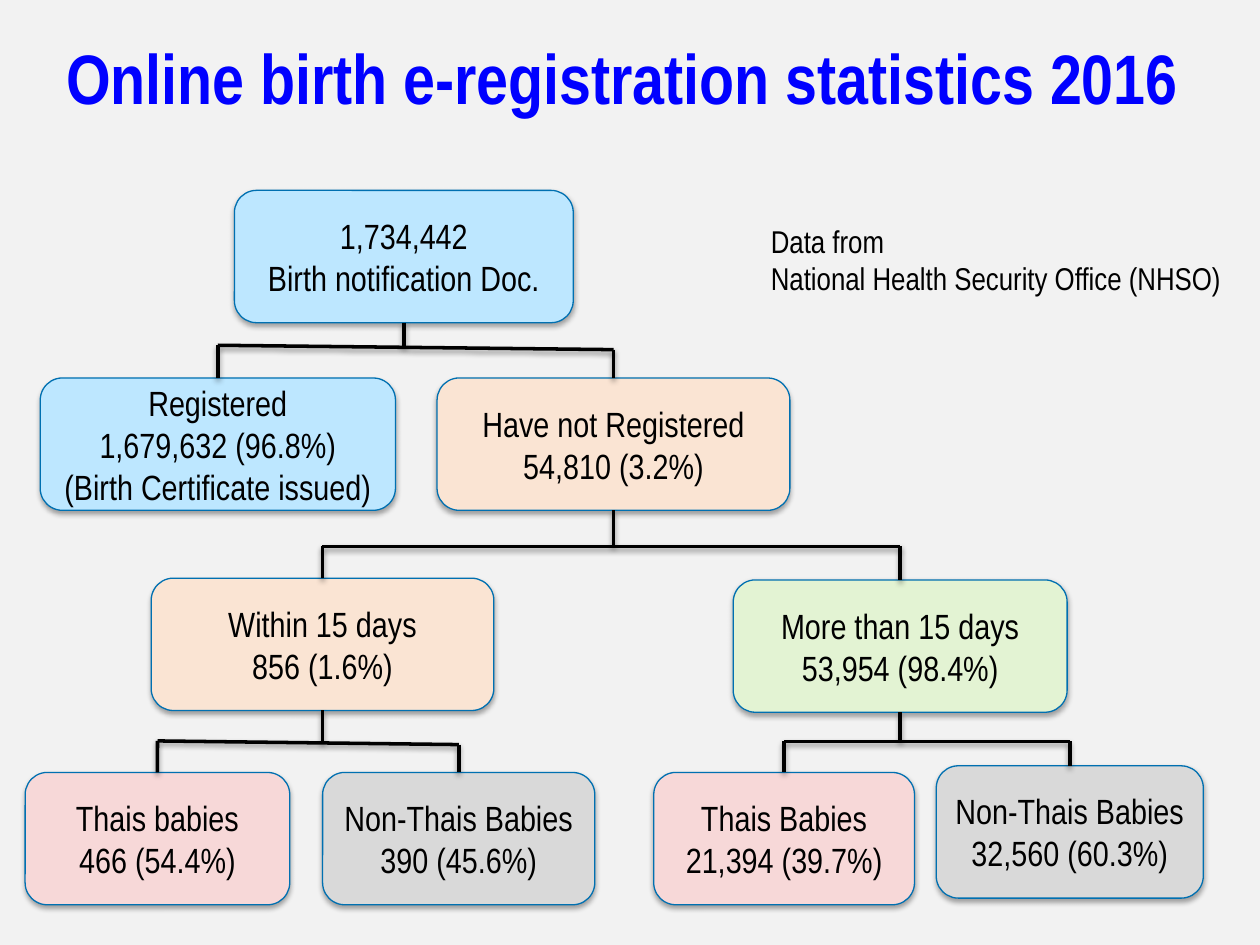
"""Build the birth e-registration statistics tree slide."""
from dataclasses import dataclass
from typing import Any, NamedTuple

import lxml.etree
import pptx
import pptx.dml.color
import pptx.enum.shapes
import pptx.enum.text
import pptx.oxml.ns
import pptx.util

Pt = pptx.util.Pt
RGB = pptx.dml.color.RGBColor.from_string
ALIGN = pptx.enum.text.PP_ALIGN
ANCHOR = pptx.enum.text.MSO_ANCHOR
AUTOFIT = pptx.enum.text.MSO_AUTO_SIZE


@dataclass(frozen=True)
class Theme:
    font: str = "Arial Narrow"
    background: str = "F2F2F2"
    title: str = "0000FF"
    ink: str = "000000"
    outline: str = "0070B1"
    blue: str = "BDE7FF"
    peach: str = "FAE4D3"
    green: str = "E3F3D3"
    pink: str = "F7D8D8"
    gray: str = "D9D9D9"
    title_size: float = 40
    box_size: float = 20
    source_size: float = 18
    outline_width: float = 0.75
    branch_width: float = 2


class Group(NamedTuple):
    text: str
    left: float
    top: float
    width: float
    fill: str


class Branch(NamedTuple):
    parent: str
    children: tuple[str, str]
    bar_left: float
    bar_right: float


THEME = Theme()
BOX_HEIGHT = 75.6

GROUPS = {
    "births": Group("1,734,442\nBirth notification Doc.", 134, 108.8, 193.6, THEME.blue),
    "registered": Group("Registered\n1,679,632 (96.8%)\n(Birth Certificate issued)",
                        23, 216, 203, THEME.blue),
    "unregistered": Group("Have not Registered\n54,810 (3.2%)", 249.8, 216, 201.6, THEME.peach),
    "within": Group("Within 15 days\n856 (1.6%)", 86.4, 330.4, 195.8, THEME.peach),
    "later": Group("More than 15 days\n53,954 (98.4%)", 419, 331.4, 190.8, THEME.green),
    "later_non_thai": Group("Non-Thais Babies\n32,560 (60.3%)", 535, 437.6, 152.6, THEME.gray),
    "later_thai": Group("Thais Babies\n21,394 (39.7%)", 373.6, 441.4, 149, THEME.pink),
    "within_thai": Group("Thais babies\n466 (54.4%)", 14.4, 441.4, 151.2, THEME.pink),
    "within_non_thai": Group("Non-Thais Babies\n390 (45.6%)", 184.4, 441.4, 155.5, THEME.gray),
}

BRANCHES = [
    Branch("births", ("registered", "unregistered"), 197.3, 199.8),
    Branch("unregistered", ("within", "later"), 312.2, 312.2),
    Branch("within", ("within_thai", "within_non_thai"), 423.4, 425.5),
    Branch("later", ("later_thai", "later_non_thai"), 423.6, 423.6),
]


def write(frame: Any, text: str, *, size: float, color: str = THEME.ink, bold: bool = False,
          align: Any = ALIGN.CENTER, anchor: Any = ANCHOR.MIDDLE, wrap: bool = True,
          autofit: Any = AUTOFIT.NONE) -> None:
    """Fill a text frame, one paragraph for each line of text."""
    frame.text = text
    frame.word_wrap = wrap
    frame.auto_size = autofit
    frame.vertical_anchor = anchor
    for paragraph in frame.paragraphs:
        paragraph.alignment = align
        font = paragraph.font
        font.name, font.size, font.bold = THEME.font, Pt(size), bold
        font.color.rgb = RGB(color)


def add_shadow(item: Any, opacity: int) -> None:
    """Give a shape or connector a soft shadow straight below it."""
    qn = pptx.oxml.ns.qn
    effects = lxml.etree.SubElement(item._element.spPr, qn("a:effectLst"))
    shadow = lxml.etree.SubElement(
        effects, qn("a:outerShdw"), blurRad=str(Pt(3.1)), dist=str(Pt(1.8)),
        dir="5400000", rotWithShape="0")
    color = lxml.etree.SubElement(shadow, qn("a:srgbClr"), val=THEME.ink)
    lxml.etree.SubElement(color, qn("a:alpha"), val=str(opacity * 1000))


def add_group(slide: Any, group: Group) -> Any:
    """Draw one rounded box of the tree."""
    box = slide.shapes.add_shape(
        pptx.enum.shapes.MSO_SHAPE.ROUNDED_RECTANGLE,
        Pt(group.left), Pt(group.top), Pt(group.width), Pt(BOX_HEIGHT))
    box.fill.solid()
    box.fill.fore_color.rgb = RGB(group.fill)
    box.line.color.rgb = RGB(THEME.outline)
    box.line.width = Pt(THEME.outline_width)
    add_shadow(box, 35)
    write(box.text_frame, group.text, size=THEME.box_size)
    return box


def add_line(slide: Any, x1: float, y1: float, x2: float, y2: float) -> Any:
    """Draw one straight line of a branch."""
    line = slide.shapes.add_connector(
        pptx.enum.shapes.MSO_CONNECTOR.STRAIGHT, Pt(x1), Pt(y1), Pt(x2), Pt(y2))
    line.line.color.rgb = RGB(THEME.ink)
    line.line.width = Pt(THEME.branch_width)
    add_shadow(line, 38)
    return line


def center(group: Group) -> float:
    """Return the horizontal centre of a box."""
    return group.left + group.width / 2


def add_branch(slide: Any, branch: Branch, boxes: dict[str, Any]) -> None:
    """Join a parent box to its two children through a bar."""
    parent = GROUPS[branch.parent]
    left, right = (center(GROUPS[child]) for child in branch.children)
    bar_ends = (branch.bar_left, branch.bar_right)
    add_line(slide, left, branch.bar_left, right, branch.bar_right)
    middle = center(parent)
    trunk = add_line(slide, middle, parent.top + BOX_HEIGHT, middle, sum(bar_ends) / 2)
    trunk.begin_connect(boxes[branch.parent], 2)
    for child, x, bar in zip(branch.children, (left, right), bar_ends):
        drop = add_line(slide, x, bar, x, GROUPS[child].top)
        drop.end_connect(boxes[child], 0)


def main() -> None:
    """Build and save the slide."""
    deck = pptx.Presentation()
    deck.slide_width, deck.slide_height = Pt(720), Pt(540)
    slide = deck.slides.add_slide(deck.slide_layouts[5])
    slide.background.fill.solid()
    slide.background.fill.fore_color.rgb = RGB(THEME.background)

    title = slide.shapes.title
    title.left, title.top, title.width, title.height = Pt(23.8), Pt(15.8), Pt(663.8), Pt(55.4)
    write(title.text_frame, "Online birth e-registration statistics 2016",
          size=THEME.title_size, color=THEME.title, bold=True)

    boxes = {key: add_group(slide, group) for key, group in GROUPS.items()}
    for branch in BRANCHES:
        add_branch(slide, branch, boxes)

    source = slide.shapes.add_textbox(Pt(433.4), Pt(123.1), Pt(278.6), Pt(51.1))
    write(source.text_frame, "Data from\nNational Health Security Office (NHSO)",
          size=THEME.source_size, align=ALIGN.LEFT, anchor=ANCHOR.TOP, wrap=False,
          autofit=AUTOFIT.SHAPE_TO_FIT_TEXT)
    deck.save("out.pptx")


if __name__ == "__main__":
    main()
